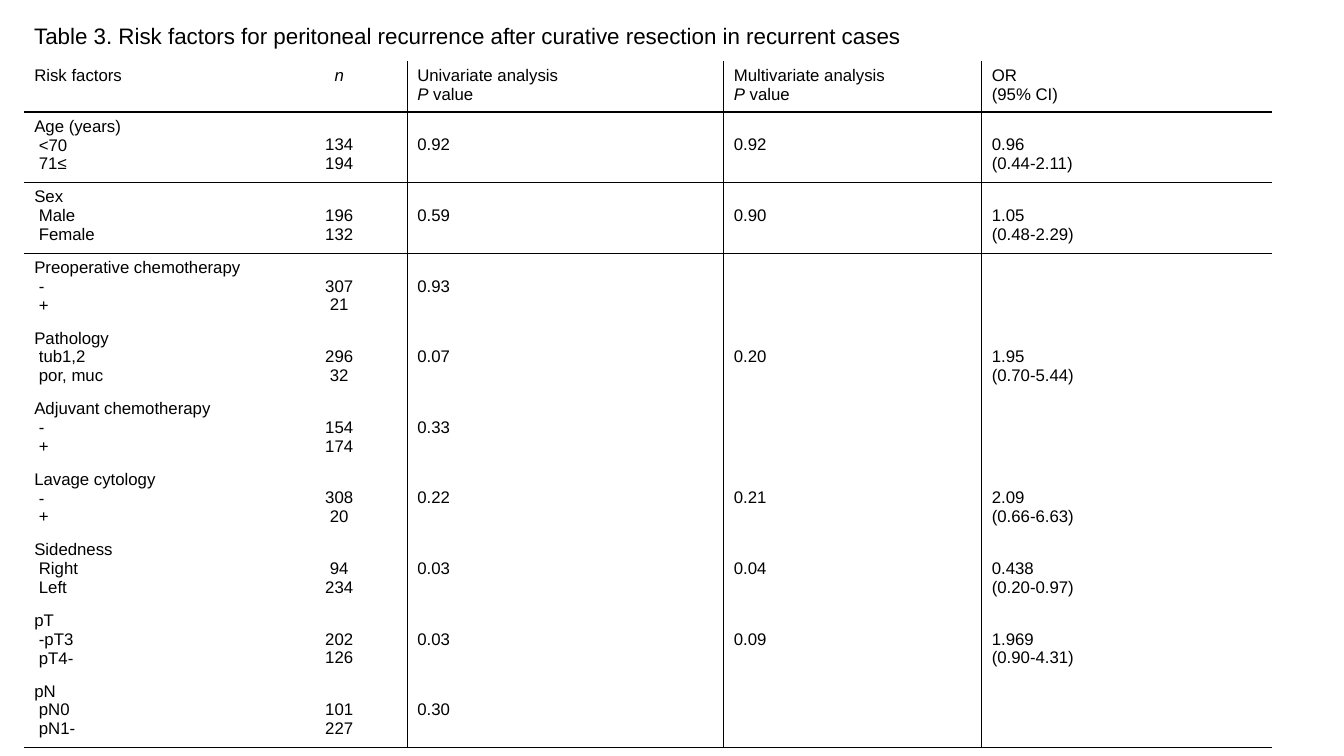
"""Build a slide with a table of risk factors for peritoneal recurrence."""
from lxml import etree
from pptx import Presentation
from pptx.dml.color import RGBColor
from pptx.enum.text import MSO_ANCHOR, PP_ALIGN
from pptx.oxml.ns import qn
from pptx.util import Pt

LEFT, CENTER = PP_ALIGN.LEFT, PP_ALIGN.CENTER
MIDDLE = MSO_ANCHOR.MIDDLE
BLACK = RGBColor(0, 0, 0)
FONT = "Arial"
PLAIN_TABLE = "{2D5ABB26-0587-4C30-8999-92F81FD0307C}"

TITLE = "Table 3. Risk factors for peritoneal recurrence after curative resection in recurrent cases"
HEADINGS = [
    ["Risk factors"],
    ["n"],
    ["Univariate analysis", "P value"],
    ["Multivariate analysis", "P value"],
    ["OR", "(95% CI)"],
]
ITALIC_SYMBOLS = ("n", "P")
RISK_FACTORS = [
    ("Age (years)", ["<70", "71≤"], ["134", "194"], ["0.92"], ["0.92"], ["0.96", "(0.44-2.11)"]),
    ("Sex", ["Male", "Female"], ["196", "132"], ["0.59"], ["0.90"], ["1.05", "(0.48-2.29)"]),
    ("Preoperative chemotherapy", ["-", "+"], ["307", "21"], ["0.93"], [], []),
    ("Pathology", ["tub1,2", "por, muc"], ["296", "32"], ["0.07"], ["0.20"], ["1.95", "(0.70-5.44)"]),
    ("Adjuvant chemotherapy", ["-", "+"], ["154", "174"], ["0.33"], [], []),
    ("Lavage cytology", ["-", "+"], ["308", "20"], ["0.22"], ["0.21"], ["2.09", "(0.66-6.63)"]),
    ("Sidedness", ["Right", "Left"], ["94", "234"], ["0.03"], ["0.04"], ["0.438", "(0.20-0.97)"]),
    ("pT", ["-pT3", "pT4-"], ["202", "126"], ["0.03"], ["0.09"], ["1.969", "(0.90-4.31)"]),
    ("pN", ["pN0", "pN1-"], ["101", "227"], ["0.30"], [], []),
]

TABLE_LEFT, TABLE_TOP = 17.3, 43.9
COLUMN_WIDTHS = [176.4, 97.2, 226.1, 184.3, 207.4]
HEADING_HEIGHT, FACTOR_HEIGHT = 36, 50.4
CELL_MARGIN, LINE_HEIGHT, LEVEL_INDENT = 3.6, 13.4, 3.3
COUNT_COLUMN = 1
RULED_COLUMNS = (1, 2)
RULED_ROWS = (0, 1, len(RISK_FACTORS))


def write(frame, lines, size=12, align=LEFT, spacing=None, indent=0):
    """Write lines into a frame, indenting all but the first one."""
    for number, line in enumerate(lines):
        paragraph = frame.paragraphs[0] if number == 0 else frame.add_paragraph()
        paragraph.alignment = align
        if spacing:
            paragraph.line_spacing = spacing
        if number and indent:
            paragraph._p.get_or_add_pPr().set("marL", str(int(Pt(indent))))
        symbol, space, rest = line.partition(" ")
        pieces = [symbol, space + rest] if symbol in ITALIC_SYMBOLS else [line]
        for piece in filter(None, pieces):
            run = paragraph.add_run()
            run.text = piece
            run.font.name = FONT
            run.font.size = Pt(size)
            run.font.italic = piece in ITALIC_SYMBOLS
            run.font.color.rgb = BLACK


def rule(cell, sides):
    """Draw a thin black border on the given sides of a cell."""
    properties = cell._tc.get_or_add_tcPr()
    for side in sides:
        border = etree.SubElement(properties, qn(f"a:ln{side}"), w=str(int(Pt(1))))
        fill = etree.SubElement(border, qn("a:solidFill"))
        etree.SubElement(fill, qn("a:srgbClr"), val=str(BLACK))


def border_sides(row, column):
    """Return the ruled sides of a cell, in schema order."""
    sides = {
        "L": column - 1 in RULED_COLUMNS[:1] or column - 1 == RULED_COLUMNS[1],
        "R": column in RULED_COLUMNS,
        "T": row - 1 in RULED_ROWS,
        "B": row in RULED_ROWS,
    }
    return [side for side, ruled in sides.items() if ruled]


def add_title(slide):
    """Add the table caption."""
    frame = slide.shapes.add_textbox(Pt(TABLE_LEFT), Pt(7.2), Pt(644.4), Pt(38.9)).text_frame
    frame.word_wrap = True
    frame.vertical_anchor = MIDDLE
    write(frame, [TITLE], size=16, spacing=0.9)


def add_risk_table(slide):
    """Add the table of risk factors."""
    heights = [HEADING_HEIGHT] + [FACTOR_HEIGHT] * len(RISK_FACTORS)
    table = slide.shapes.add_table(
        len(heights), len(COLUMN_WIDTHS), Pt(TABLE_LEFT), Pt(TABLE_TOP),
        Pt(sum(COLUMN_WIDTHS)), Pt(sum(heights))).table
    table.first_row = table.horz_banding = False
    table._tbl.tblPr.find(qn("a:tableStyleId")).text = PLAIN_TABLE
    for column, width in zip(table.columns, COLUMN_WIDTHS):
        column.width = Pt(width)
    for row, height in zip(table.rows, heights):
        row.height = Pt(height)

    factor_rows = [[[factor, *levels], *values] for factor, levels, *values in RISK_FACTORS]
    for row, contents in enumerate([HEADINGS, *factor_rows]):
        for column, lines in enumerate(contents):
            cell = table.cell(row, column)
            beside_levels = row > 0 and column > 0
            cell.margin_top = Pt(CELL_MARGIN + LINE_HEIGHT * beside_levels)
            cell.margin_bottom = Pt(CELL_MARGIN)
            rule(cell, border_sides(row, column))
            cell.fill.background()
            write(cell.text_frame, lines,
                  align=CENTER if column == COUNT_COLUMN else LEFT,
                  indent=LEVEL_INDENT if column == 0 else 0)


def main():
    """Build and save the presentation."""
    presentation = Presentation()
    presentation.slide_width, presentation.slide_height = Pt(960), Pt(540)
    slide = presentation.slides.add_slide(presentation.slide_layouts[6])
    add_title(slide)
    add_risk_table(slide)
    presentation.save("out.pptx")


if __name__ == "__main__":
    main()
